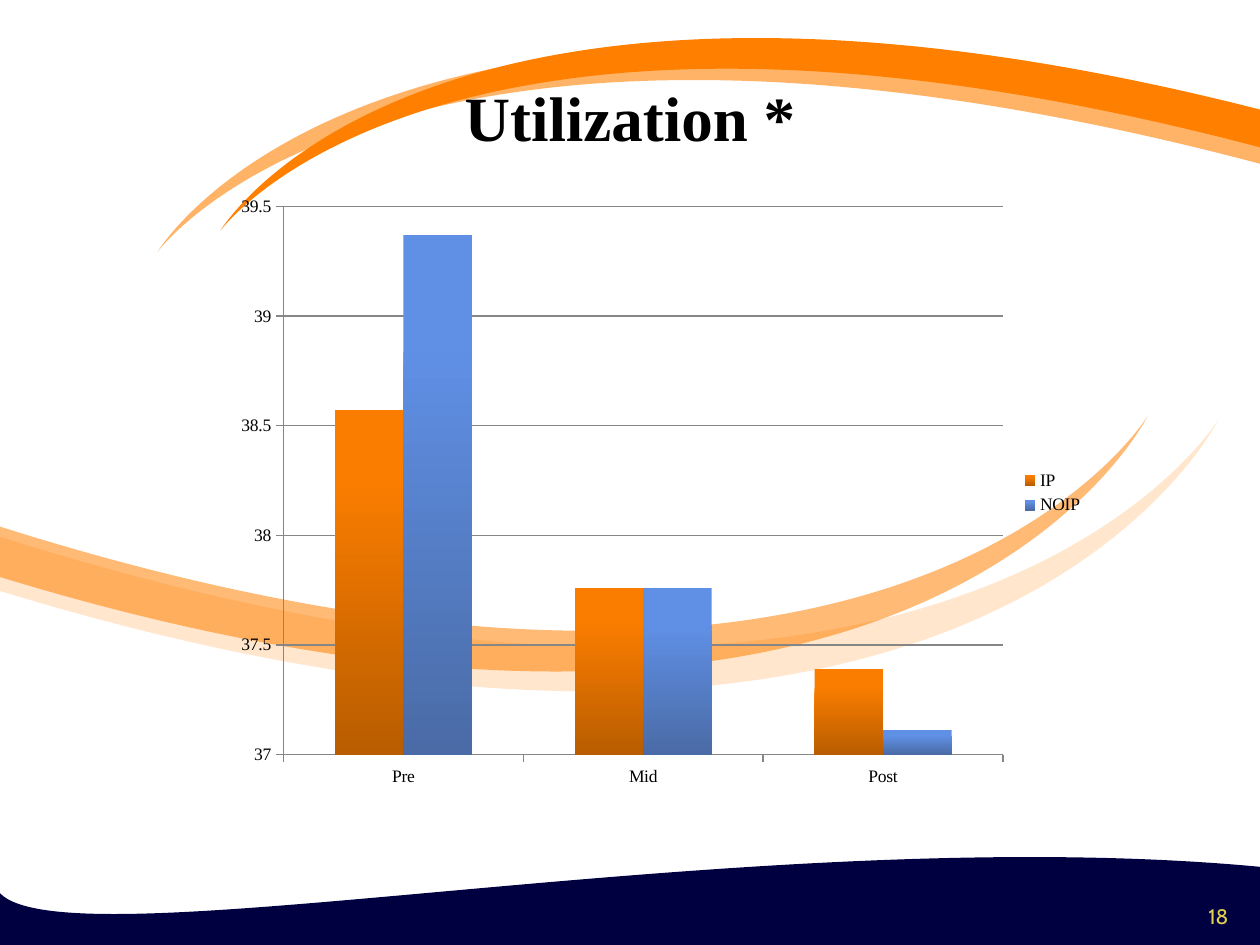
from lxml import etree
from pptx import Presentation
from pptx.chart.data import CategoryChartData
from pptx.dml.color import RGBColor
from pptx.enum import chart as ch, text as tx
from pptx.oxml import parse_xml
from pptx.oxml.ns import nsdecls, qn
from pptx.util import Inches, Pt

SERIF = "Times New Roman"

# Each band: fill, opacity in percent, start point, segments.
# Six numbers make a cubic curve, two make a straight line.
BANDS = [
    ("000040", 100, (0, 7.09), [(0.56, 7.67, 5.96, 6.5, 10, 6.88),
                                (10, 7.09, 10.01, 7.32, 10.01, 7.54),
                                (0, 7.51), (0, 7.09)]),
    ("FFE6CC", 100, (0, 4.26), [(7.63, 6.68, 9.67, 3.33, 9.67, 3.33),
                                (9.67, 3.33, 7.82, 7.08, 0, 4.69),
                                (0, 4.69, 0, 4.63, 0, 4.26)]),
    ("FFB366", 100, (10, 1.3), [(3.09, -0.53, 1.25, 2, 1.25, 2),
                                (1.25, 2, 2.92, -0.83, 10, 0.97),
                                (10, 0.97, 10, 1.02, 10, 1.3)]),
    ("FF8000", 100, (10, 1.17), [(3.49, -0.55, 1.75, 1.83, 1.75, 1.83),
                                 (1.75, 1.83, 3.33, -0.83, 10, 0.87),
                                 (10, 0.87, 10, 0.91, 10, 1.17)]),
    ("FF8000", 54, (0, 4.18), [(7.2, 6.46, 9.11, 3.3, 9.11, 3.3),
                               (9.11, 3.3, 7.37, 6.83, 0, 4.58),
                               (0, 4.58, 0, 4.53, 0, 4.18)]),
]
SERIES = [
    ("IP", (38.57, 37.76, 37.39), "FA7D00", "B95D00"),
    ("NOIP", (39.37, 37.76, 37.11), "6090E6", "4A6BA6"),
]
CHART = (1.77, 1.47, 6.93, 4.88)
PLOT = (2.25, 1.64, 5.71, 4.35)


def color(code):
    return RGBColor.from_string(code)


def bend(band, parts):
    """Turn each run of three straight lines that stands for a cubic into one."""
    lines = iter(band.element.findall(".//" + qn("a:lnTo")))
    for part in parts:
        first, *rest = [next(lines) for _ in range(len(part) // 2)]
        if rest:
            curve = etree.Element(qn("a:cubicBezTo"))
            first.addprevious(curve)
            for line in (first, *rest):
                curve.append(line[0])
                line.getparent().remove(line)


def add_band(slide, fill, alpha, start, parts):
    dots = [(Inches(x), Inches(y)) for part in parts
            for x, y in zip(part[::2], part[1::2])]
    pen = slide.shapes.build_freeform(*map(Inches, start))
    pen.add_line_segments(dots, close=True)
    band = pen.convert_to_shape()
    bend(band, parts)
    band.shadow.inherit = False
    band.fill.solid()
    band.fill.fore_color.rgb = color(fill)
    band.line.fill.background()
    if alpha < 100:
        tone = band.element.spPr.find(".//" + qn("a:srgbClr"))
        etree.SubElement(tone, qn("a:alpha"), val=str(alpha * 1000))


def set_font(font, name, size, code, bold=False):
    font.name, font.size, font.bold = name, Pt(size), bold
    font.color.rgb = color(code)


def write(shape, words, anchor, *style):
    frame = shape.text_frame
    frame.word_wrap = True
    frame.vertical_anchor = anchor
    para = frame.paragraphs[0]
    para.alignment = tx.PP_ALIGN.CENTER
    run = para.add_run()
    run.text = words
    set_font(run.font, *style)


def place_plot(chart):
    """Fix the inner plot area, in fractions of the chart."""
    left, top, wide, high = CHART
    x, y, w, h = PLOT
    parts = ((x - left) / wide, (y - top) / high, w / wide, h / high)
    area = chart.element.find(".//" + qn("c:plotArea"))
    old = area.find(qn("c:layout"))
    if old is not None:
        area.remove(old)
    sizes = "".join(f'<c:{k} val="{v:.4f}"/>' for k, v in zip("xywh", parts))
    area.insert(0, parse_xml(
        f'<c:layout {nsdecls("c")}><c:manualLayout>'
        '<c:layoutTarget val="inner"/><c:xMode val="edge"/>'
        f'<c:yMode val="edge"/>{sizes}</c:manualLayout></c:layout>'))


def shade(fill, top, base):
    fill.gradient()
    fill.gradient_angle = 270
    for stop, spot, code in zip(fill.gradient_stops, (0.2, 1), (top, base)):
        stop.position = spot
        stop.color.rgb = color(code)


def add_bars(slide):
    data = CategoryChartData()
    data.categories = ["Pre", "Mid", "Post"]
    for name, vals, *_ in SERIES:
        data.add_series(name, vals)
    chart = slide.shapes.add_chart(
        ch.XL_CHART_TYPE.COLUMN_CLUSTERED, *map(Inches, CHART), data).chart
    set_font(chart.font, SERIF, 10, "000000")
    chart.has_title = False
    chart.has_legend = True
    chart.legend.position = ch.XL_LEGEND_POSITION.RIGHT
    chart.legend.include_in_layout = False
    place_plot(chart)

    plot = chart.plots[0]
    plot.vary_by_categories = False
    plot.gap_width, plot.overlap = 150, 0
    for bars, (_, _, top, base) in zip(plot.series, SERIES):
        shade(bars.format.fill, top, base)

    axis = chart.value_axis
    axis.minimum_scale = 37
    axis.has_major_gridlines = True
    axis.tick_labels.number_format = "General"
    axis.tick_labels.number_format_is_linked = False
    for side in (axis, chart.category_axis):
        side.major_tick_mark = ch.XL_TICK_MARK.OUTSIDE
    for part in (axis, chart.category_axis, axis.major_gridlines):
        part.format.line.color.rgb = color("868686")
        part.format.line.width = Pt(0.75)


def main():
    deck = Presentation()
    deck.slide_width, deck.slide_height = Inches(10), Inches(7.5)
    slide = deck.slides.add_slide(deck.slide_layouts[5])
    for band in BANDS:
        add_band(slide, *band)

    title = slide.shapes.title
    title.left, title.top = Inches(0.5), Inches(0.3)
    title.width, title.height = Inches(9), Inches(1.25)
    write(title, "Utilization *", tx.MSO_ANCHOR.MIDDLE,
          SERIF, 36, "000000", True)
    slide.shapes.element.append(title.element)  # in front of the bands

    page = slide.shapes.add_textbox(
        Inches(9.42), Inches(6.9), Inches(0.5), Inches(0.52))
    write(page, "18", tx.MSO_ANCHOR.BOTTOM, "Cabin", 12, "E1CF50")
    add_bars(slide)
    deck.save("out.pptx")


if __name__ == "__main__":
    main()
